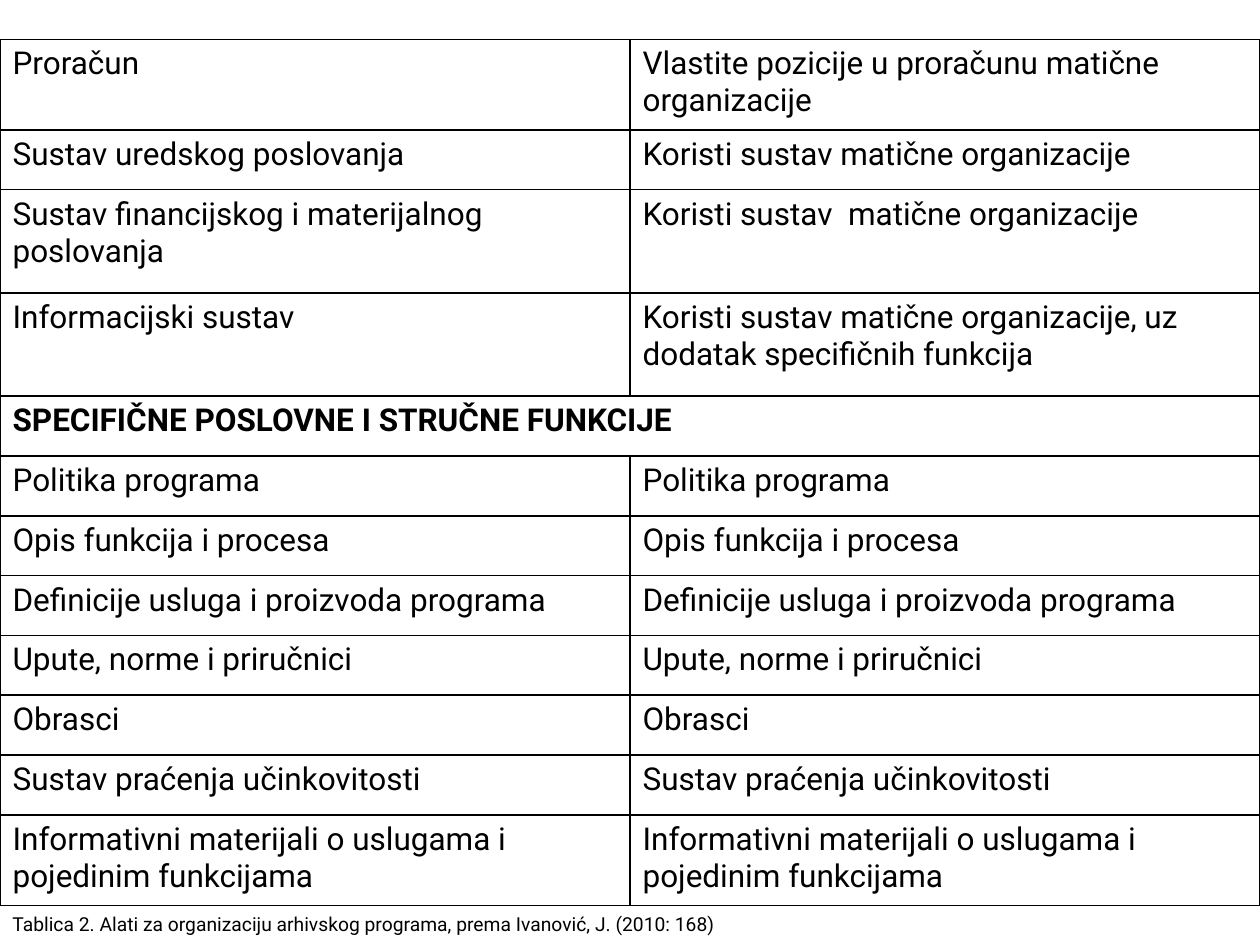
from lxml import etree
from pptx import Presentation
from pptx.dml.color import RGBColor
from pptx.enum.text import MSO_ANCHOR
from pptx.oxml.ns import qn
from pptx.util import Pt

TOP = MSO_ANCHOR.TOP
FONT = "Roboto"
COLORS = {"text": "000000", "border": "000000", "cell": "FFFFFF"}
BLANK_LAYOUT = 6
SINGLE, DOUBLE, TALL = 34.2, 51.7, 59
SECTION = "SPECIFIČNE POSLOVNE I STRUČNE FUNKCIJE"
GENERAL_TOOLS = [
    ("Proračun", "Vlastite pozicije u proračunu matične organizacije", DOUBLE),
    ("Sustav uredskog poslovanja", "Koristi sustav matične organizacije", SINGLE),
    ("Sustav financijskog i materijalnog poslovanja", "Koristi sustav  matične organizacije", TALL),
    ("Informacijski sustav", "Koristi sustav matične organizacije, uz dodatak specifičnih funkcija", TALL),
]
SPECIFIC_TOOLS = [
    ("Politika programa", SINGLE),
    ("Opis funkcija i procesa", SINGLE),
    ("Definicije usluga i proizvoda programa", SINGLE),
    ("Upute, norme i priručnici", SINGLE),
    ("Obrasci", SINGLE),
    ("Sustav praćenja učinkovitosti", SINGLE),
    ("Informativni materijali o uslugama i pojedinim funkcijama", DOUBLE),
]
ROWS = (
    GENERAL_TOOLS
    + [(SECTION, "", SINGLE)]
    + [(name, name, height) for name, height in SPECIFIC_TOOLS]
)
CAPTION = "Tablica 2. Alati za organizaciju arhivskog programa, prema Ivanović, J. (2010: 168)"


def add_run(paragraph, text, size, bold=False):
    """Add one formatted run to a paragraph."""
    run = paragraph.add_run()
    run.text = text
    run.font.name = FONT
    run.font.size = Pt(size)
    run.font.bold = bold
    run.font.color.rgb = RGBColor.from_string(COLORS["text"])


def set_borders(cell, width):
    """Draw a solid line on all four sides of a cell."""
    properties = cell._tc.get_or_add_tcPr()
    for index, side in enumerate(("a:lnL", "a:lnR", "a:lnT", "a:lnB")):
        line = etree.Element(qn(side), w=str(Pt(width)))
        fill = etree.SubElement(line, qn("a:solidFill"))
        etree.SubElement(fill, qn("a:srgbClr"), val=COLORS["border"])
        properties.insert(index, line)


def add_tools_table(slide, left, top, width, height):
    """Place the two-column table of tools in the given box."""
    frame = slide.shapes.add_table(len(ROWS), 2, Pt(left), Pt(top), Pt(width), Pt(height))
    table = frame.table
    table.first_row = False
    table.horz_banding = False
    for column in table.columns:
        column.width = Pt(width / 2)
    for row, (tool, solution, row_height) in zip(table.rows, ROWS):
        row.height = Pt(row_height)
        for cell, text in zip(row.cells, (tool, solution)):
            cell.fill.solid()
            cell.fill.fore_color.rgb = RGBColor.from_string(COLORS["cell"])
            cell.vertical_anchor = TOP
            set_borders(cell, 1)
            if text:
                add_run(cell.text_frame.paragraphs[0], text, 18, text == SECTION)
    section_row = len(GENERAL_TOOLS)
    table.cell(section_row, 0).merge(table.cell(section_row, 1))


def add_caption(slide, left, top, width, height):
    """Place the table caption in the given box."""
    shape = slide.shapes.add_textbox(Pt(left), Pt(top), Pt(width), Pt(height))
    shape.text_frame.word_wrap = True
    add_run(shape.text_frame.paragraphs[0], CAPTION, 11)


def main():
    """Build and save the slide."""
    presentation = Presentation()
    presentation.slide_width, presentation.slide_height = Pt(720), Pt(540)
    slide = presentation.slides.add_slide(presentation.slide_layouts[BLANK_LAYOUT])
    table_top = 22.5
    table_height = sum(height for _, _, height in ROWS)
    add_tools_table(slide, 0, table_top, 720, table_height)
    add_caption(slide, 0, table_top + table_height, 720, 20.6)
    presentation.save("out.pptx")


if __name__ == "__main__":
    main()
